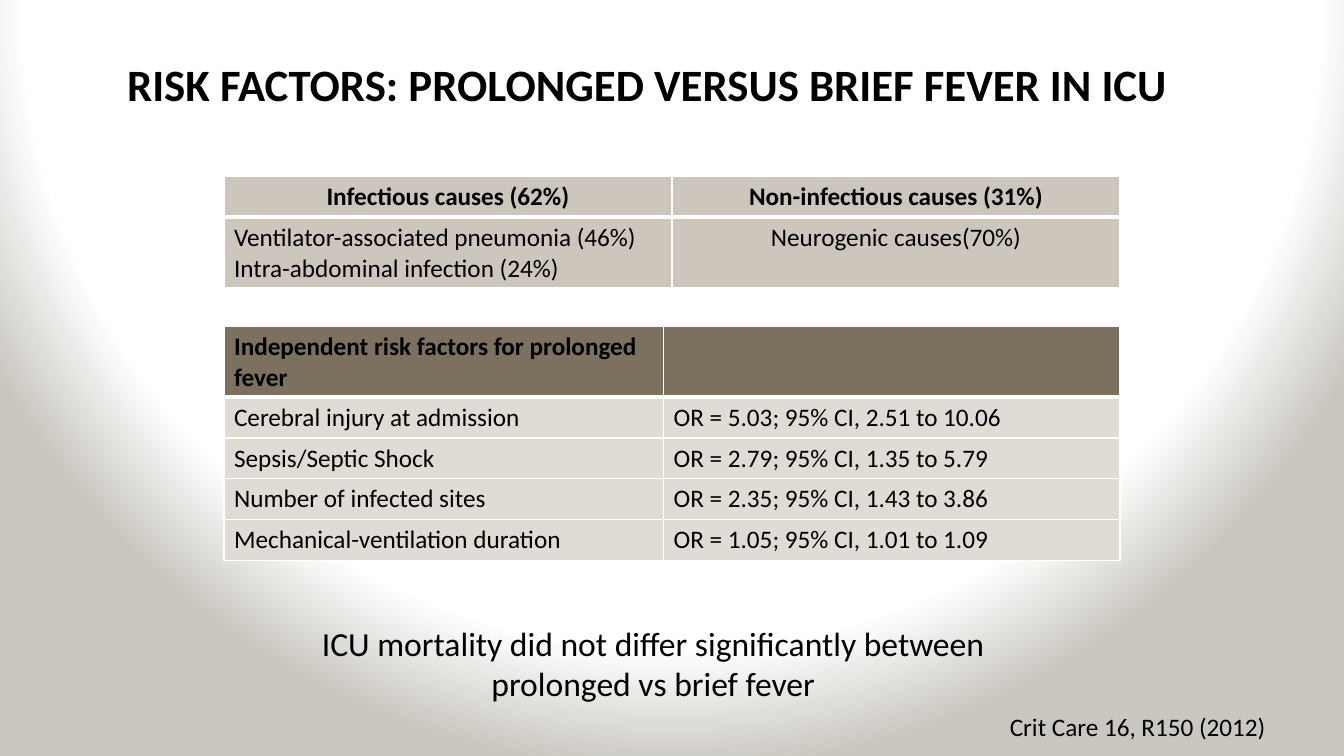
import pptx
import pptx.dml.color
import pptx.enum.text
import pptx.oxml
import pptx.oxml.ns
import pptx.util

RGBColor = pptx.dml.color.RGBColor
ALIGN = pptx.enum.text.PP_ALIGN
qn = pptx.oxml.ns.qn

BLACK = RGBColor(0x00, 0x00, 0x00)
WHITE = RGBColor(0xFF, 0xFF, 0xFF)
STONE = RGBColor(0xCA, 0xC7, 0xC1)
SAND = RGBColor(0xCC, 0xC6, 0xBC)
BROWN = RGBColor(0x7C, 0x70, 0x5E)
PALE = RGBColor(0xDF, 0xDB, 0xD5)

WIDTH, HEIGHT = pptx.util.Inches(13.33), pptx.util.Inches(7.5)
COL, ROW = WIDTH / 48, HEIGHT / 30
LINE_ROWS = 1.62
TABLE_LEFT = 8

CAUSES = [
    [["Infectious causes (62%)"], ["Non-infectious causes (31%)"]],
    [["Ventilator-associated pneumonia (46%)", "Intra-abdominal infection (24%)"],
     ["Neurogenic causes(70%)"]],
]
RISKS = [
    [["Independent risk factors for prolonged fever"], []],
    [["Cerebral injury at admission"], ["OR = 5.03; 95% CI, 2.51 to 10.06"]],
    [["Sepsis/Septic Shock"], ["OR = 2.79; 95% CI, 1.35 to 5.79"]],
    [["Number of infected sites"], ["OR = 2.35; 95% CI, 1.43 to 3.86"]],
    [["Mechanical-ventilation duration"], ["OR = 1.05; 95% CI, 1.01 to 1.09"]],
]


def cols(n):
    return pptx.util.Emu(round(n * COL))


def rows(n):
    return pptx.util.Emu(round(n * ROW))


def write(tf, lines, size, bold=False, align=ALIGN.LEFT):
    for i, line in enumerate(lines):
        p = tf.add_paragraph() if i else tf.paragraphs[0]
        p.alignment = align
        r = p.add_run()
        r.text = line
        r.font.name = "Calibri"
        r.font.size = pptx.util.Pt(size)
        r.font.bold = bold
        r.font.color.rgb = BLACK


def add_background(s):
    fill = s.background.fill
    fill.gradient()
    for stop, color, position in zip(fill.gradient_stops, (WHITE, STONE), (0.84, 1)):
        stop.color.rgb = color
        stop.position = position
    grad = next(s.element.iter(qn("a:gradFill")))
    grad.remove(grad.find(qn("a:lin")))
    grad.append(pptx.oxml.parse_xml(
        f'<a:path {pptx.oxml.ns.nsdecls("a")} path="circle">'
        '<a:fillToRect l="43000" t="0" r="43000" b="100000"/></a:path>'))


def add_title(s, text):
    sp = s.shapes.title
    sp.left, sp.top, sp.width, sp.height = cols(4.18), rows(2.28), cols(39.64), rows(3.16)
    tf = sp.text_frame
    tf.word_wrap = True
    tf.auto_size = pptx.enum.text.MSO_AUTO_SIZE.NONE
    tf.vertical_anchor = pptx.enum.text.MSO_ANCHOR.TOP
    write(tf, [text], 32, bold=True)
    tf.paragraphs[0].line_spacing = 0.9


def add_text(s, left, top, width, height, text, size, align=ALIGN.LEFT):
    sp = s.shapes.add_textbox(cols(left), rows(top), cols(width), rows(height))
    sp.text_frame.word_wrap = True
    write(sp.text_frame, [text], size, align=align)


def add_borders(cell, widths):
    tcPr = cell._tc.get_or_add_tcPr()
    for side, width in zip("LRTB", widths):
        tcPr.append(pptx.oxml.parse_xml(
            f'<a:ln{side} {pptx.oxml.ns.nsdecls("a")} w="{pptx.util.Pt(width)}">'
            f'<a:solidFill><a:srgbClr val="{WHITE}"/></a:solidFill></a:ln{side}>'))


def add_table(s, top, widths, data, head_fill, body_fill, centred):
    height = rows(LINE_ROWS * len(data))
    frame = s.shapes.add_table(len(data), len(widths), cols(TABLE_LEFT), rows(top),
                               cols(sum(widths)), height)
    table = frame.table
    for column, width in zip(table.columns, widths):
        column.width = cols(width)
    for i, line in enumerate(data):
        table.rows[i].height = rows(LINE_ROWS)
        head = i == 0
        for j, lines in enumerate(line):
            cell = table.cell(i, j)
            add_borders(cell, (1, 1, 3 if i == 1 else 1, 3 if head else 1))
            cell.fill.solid()
            cell.fill.fore_color.rgb = head_fill if head else body_fill
            align = ALIGN.CENTER if (i, j) in centred else ALIGN.LEFT
            write(cell.text_frame, lines, 18, bold=head, align=align)


def main():
    prs = pptx.Presentation()
    prs.slide_width, prs.slide_height = WIDTH, HEIGHT
    s = prs.slides.add_slide(prs.slide_layouts[5])
    add_background(s)
    add_title(s, "RISK FACTORS: PROLONGED VERSUS BRIEF FEVER IN ICU")
    add_text(s, 35.71, 28.04, 12, 1.6, "Crit Care 16, R150 (2012)", 18)
    add_table(s, 7, (16, 16), CAUSES, SAND, SAND, {(0, 0), (0, 1), (1, 1)})
    add_table(s, 12.96, (15.7, 16.3), RISKS, BROWN, PALE, set())
    add_text(s, 8.64, 24.52, 29.38, 3.64,
             "ICU mortality did not differ significantly between prolonged vs brief fever",
             24, ALIGN.CENTER)
    prs.save("out.pptx")


if __name__ == "__main__":
    main()
